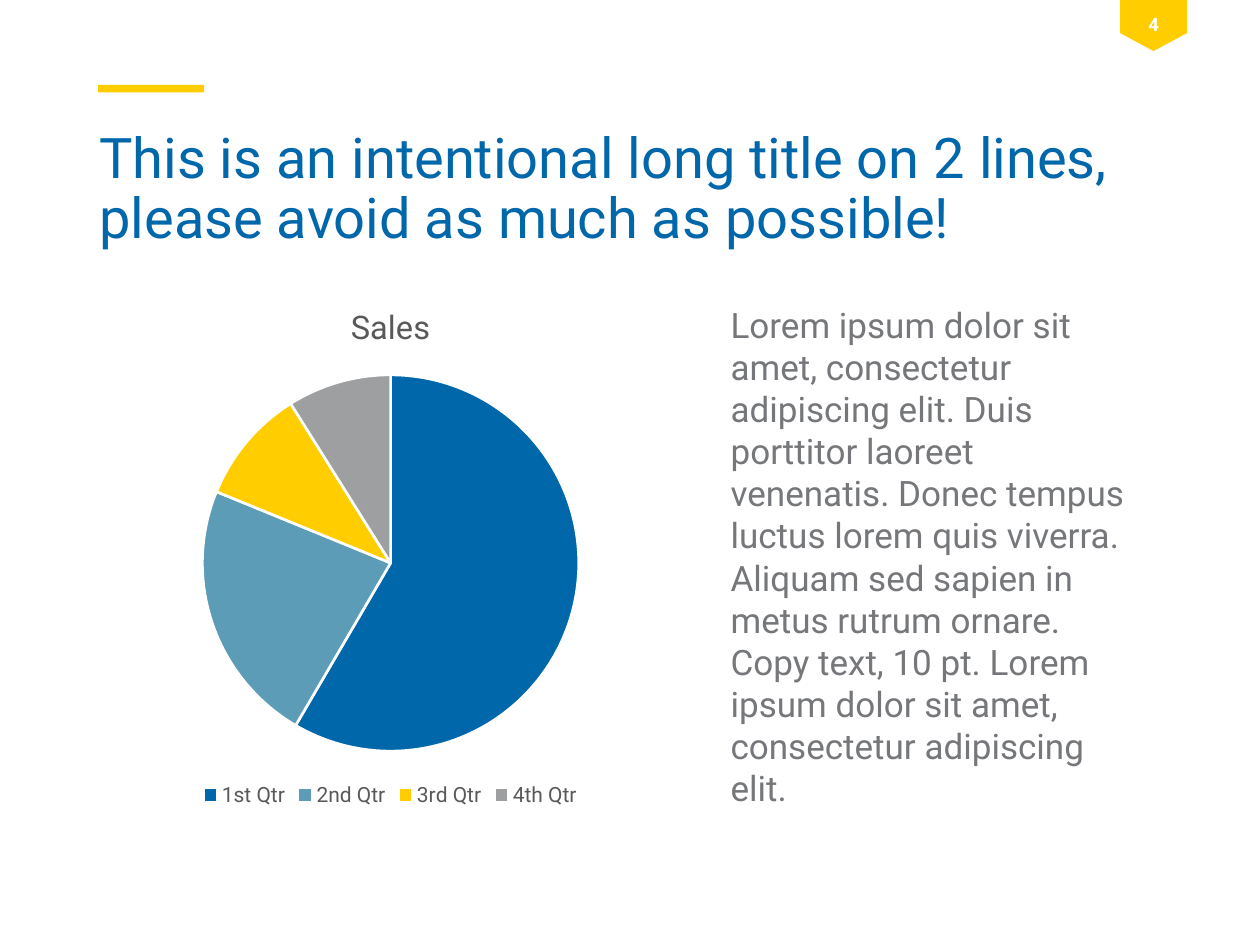
"""Build a slide with a two-line title, a sales pie chart and body copy."""
import pptx
import pptx.chart.data
import pptx.dml.color
import pptx.enum.chart
import pptx.enum.shapes
import pptx.enum.text
import pptx.util

INK = {"blue": "0067AB", "teal": "5C9CB6", "gold": "FFCD00", "gray": "9D9FA1",
       "body": "75777A", "label": "595959", "white": "FFFFFF"}
FACE = "Roboto"
WIDE, HIGH = 10, 7.5
SALES = [("1st Qtr", 59, "blue"), ("2nd Qtr", 23, "teal"),
         ("3rd Qtr", 10, "gold"), ("4th Qtr", 9, "gray")]
TEXTS = [
    {"text": "4", "at": (0.89, 0.007, 0.051, 0.037), "size": 10.5, "ink": "white",
     "bold": True, "align": "CENTER", "line": 1},
    {"text": "This is an intentional long title on 2 lines, please avoid as much as possible!",
     "at": (0.069, 0.131, 0.846, 0.15), "size": 32, "ink": "blue",
     "bold": False, "align": "LEFT", "line": 0.9},
    {"text": "Lorem ipsum dolor sit amet, consectetur adipiscing elit. Duis porttitor "
             "laoreet venenatis. Donec tempus luctus lorem quis viverra. Aliquam sed "
             "sapien in metus rutrum ornare. Copy text, 10 pt. Lorem ipsum dolor sit "
             "amet, consectetur adipiscing elit.",
     "at": (0.57, 0.315, 0.345, 0.561), "size": 20, "ink": "body",
     "bold": False, "align": "LEFT", "line": 1},
]
BLOCKS = [("ISOSCELES_TRIANGLE", (0.889, 0.035, 0.053, 0.019), 180),
          ("RECTANGLE", (0.889, 0, 0.053, 0.035), 0),
          ("RECTANGLE", (0.078, 0.09, 0.084, 0.008), 0)]
CHART = (0.069, 0.299, 0.482, 0.561)


def place(share):
    return [pptx.util.Inches(part * side) for part, side in zip(share, (WIDE, HIGH) * 2)]


def tint(name):
    return pptx.dml.color.RGBColor.from_string(INK[name])


def style(font, size, ink, bold=False):
    font.name, font.size, font.bold = FACE, pptx.util.Pt(size), bold
    font.color.rgb = tint(ink)


def block(slide, kind, share, turn):
    preset = getattr(pptx.enum.shapes.MSO_SHAPE, kind)
    shape = slide.shapes.add_shape(preset, *place(share))
    shape.rotation = turn
    shape.shadow.inherit = False
    shape.fill.solid()
    shape.fill.fore_color.rgb = tint("gold")
    shape.line.fill.background()


def write(slide, item):
    frame = slide.shapes.add_textbox(*place(item["at"])).text_frame
    frame.word_wrap = True
    frame.text = item["text"]
    para = frame.paragraphs[0]
    para.line_spacing = item["line"]
    para.alignment = getattr(pptx.enum.text.PP_ALIGN, item["align"])
    style(para.runs[0].font, item["size"], item["ink"], item["bold"])


def draw(slide):
    data = pptx.chart.data.CategoryChartData()
    names, values, inks = zip(*SALES)
    data.categories = names
    data.add_series("Sales", values)
    kind = pptx.enum.chart.XL_CHART_TYPE.PIE
    chart = slide.shapes.add_chart(kind, *place(CHART), data).chart
    style(chart.font, 10, "label")
    chart.has_title = True
    title = chart.chart_title.text_frame
    title.text = "Sales"
    style(title.paragraphs[0].runs[0].font, 18.6, "label")
    chart.has_legend = True
    chart.legend.position = pptx.enum.chart.XL_LEGEND_POSITION.BOTTOM
    chart.legend.include_in_layout = False
    style(chart.legend.font, 12, "label")
    for spot, ink in enumerate(inks):
        look = chart.plots[0].series[0].points[spot].format
        look.fill.solid()
        look.fill.fore_color.rgb = tint(ink)
        look.line.color.rgb = tint("white")
        look.line.width = pptx.util.Pt(1.5)


def main():
    deck = pptx.Presentation()
    deck.slide_width, deck.slide_height = place((1, 1))
    slide = deck.slides.add_slide(deck.slide_layouts[6])
    for part in BLOCKS:
        block(slide, *part)
    draw(slide)
    for item in TEXTS:
        write(slide, item)
    deck.save("out.pptx")


if __name__ == "__main__":
    main()
